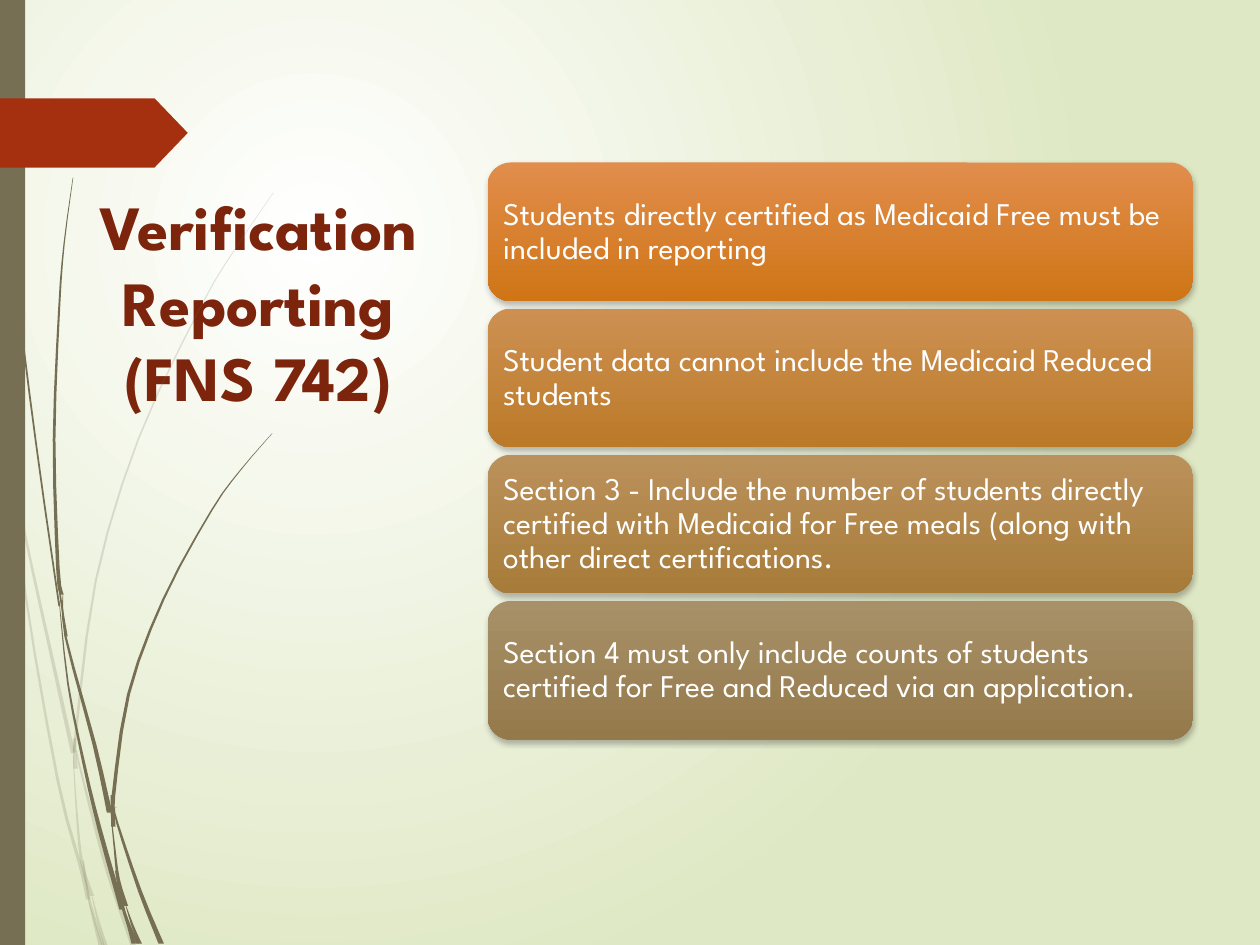
from lxml import etree
from pptx import Presentation
from pptx.dml.color import RGBColor
from pptx.enum.shapes import MSO_SHAPE as SHAPE
from pptx.enum.text import MSO_ANCHOR as ANCHOR, MSO_AUTO_SIZE as FIT, PP_ALIGN as ALIGN
from pptx.oxml import parse_xml
from pptx.oxml.ns import nsdecls, qn
from pptx.util import Pt

PX = 9144  # 100 px to the inch
FONT = "League Spartan"
OLIVE, RUST, BROWN, WHITE = "766F54", "A53010", "7C240C", "FFFFFF"

CARDS = [
    ("Students directly certified as Medicaid Free must be included in reporting",
     "E18D4C", "CF7516"),
    ("Student data cannot include the Medicaid Reduced students",
     "CE9052", "BB7A28"),
    ("Section 3 - Include the number of students directly certified with "
     "Medicaid for Free meals (along with other direct certifications.",
     "BB915B", "A77C3A"),
    ("Section 4 must only include counts of students certified for Free "
     "and Reduced via an application.",
     "A89068", "947A4B"),
]

# Each piece of grass: centre line from tip to root, tip width, root width
FAINT = [
    ([(0, 282), (6, 322), (8, 350)], 1, 1),
    ([(10, 345), (11, 370), (20, 425), (41, 521), (58, 598)], 0, 3),
    ([(61, 596), (63, 607), (74, 650), (86, 693), (106, 751)], 0, 4),
    ([(73, 711), (78, 731), (84, 751)], 0, 3),
    ([(8, 350), (12, 376), (20, 470), (46, 620), (64, 688), (70, 714)], 0, 3),
    ([(58, 599), (61, 646), (65, 685), (73, 711)], 0, 3),
    ([(217, 153), (187, 197), (159, 244), (110, 348), (76, 461), (60, 584),
      (60, 596)], 0, 2),
    ([(70, 714), (75, 733), (80, 751)], 0, 3),
    ([(59, 586), (60, 610)], 2, 3),
    ([(66, 683), (70, 710), (76, 732), (82, 751)], 1, 2),
]
DARK = [
    ([(2, 0), (5, 110), (14, 232), (29, 355), (47, 481)], 1, 1),
    ([(50, 472), (52, 505), (75, 591), (87, 645)], 0, 4),
    ([(91, 641), (93, 653), (111, 707), (128, 749)], 0, 4),
    ([(47, 477), (54, 543), (67, 608), (79, 658), (97, 722)], 0, 4),
    ([(58, 141), (51, 193), (47, 245), (43, 349), (46, 451), (49, 472)], 0, 3),
    ([(100, 719), (105, 734), (111, 749)], 0, 3),
    ([(46, 449), (48, 474), (53, 505)], 1, 1),
    ([(216, 344), (191, 373), (168, 405), (130, 475), (102, 551), (90, 632),
      (91, 641)], 0, 3),
    ([(97, 722), (102, 736), (106, 749)], 0, 3),
    ([(88, 645), (91, 674), (94, 698), (100, 719)], 0, 3),
    ([(89, 631), (90, 656)], 2, 3),
    ([(92, 691), (96, 713), (101, 730), (109, 749)], 1, 2),
]


def px(*nums):
    return [round(n * PX) for n in nums]


def rgb(code):
    return RGBColor.from_string(code)


def blend(fill, top, end, angle=None):
    fill.gradient()
    if angle is not None:
        fill.gradient_angle = angle
    for stop, code, pos in zip(fill.gradient_stops, (top, end), (0, 1)):
        stop.color.rgb = rgb(code)
        stop.position = pos


def paint(shape, code, alpha=None):
    """Fill plainly, with no line or shadow; alpha is a percentage."""
    shape.shadow.inherit = False
    shape.line.fill.background()
    shape.fill.solid()
    shape.fill.fore_color.rgb = rgb(code)
    if alpha:
        tint = shape._element.spPr.find(".//" + qn("a:srgbClr"))
        etree.SubElement(tint, qn("a:alpha")).set("val", str(alpha * 1000))


def glow(slide):
    """Set the round background gradient."""
    blend(slide.background.fill, WHITE, "DFE8C4")
    grad = slide._element.find(".//" + qn("a:gradFill"))
    grad.remove(grad.find(qn("a:lin")))
    grad.append(parse_xml(
        f'<a:path {nsdecls("a")} path="circle">'
        '<a:fillToRect l="50000" t="50000" r="100000" b="100000"/></a:path>'))


def curve(knots, steps=3):
    """Return points on a Catmull-Rom spline through the knots."""
    ends = [knots[0], *knots, knots[-1]]
    points = []
    for a, b, c, d in zip(ends, ends[1:], ends[2:], ends[3:]):
        for i in range(steps):
            t = i / steps
            points.append(tuple(
                (2 * q + (r - p) * t + (2 * p - 5 * q + 4 * r - s) * t ** 2
                 + (3 * q - p - 3 * r + s) * t ** 3) / 2
                for p, q, r, s in zip(a, b, c, d)))
    return points + [knots[-1]]


def blade(slide, knots, tip, root, alpha=None):
    points = curve(knots)
    last = len(points) - 1
    half = [0.2 + (tip + (root - tip) * i / last) / 2 for i in range(last + 1)]
    left = [px(x - h, y) for (x, y), h in zip(points, half)]
    right = [px(x + h, y) for (x, y), h in zip(points, half)]
    pen = slide.shapes.build_freeform(*left[0])
    pen.add_line_segments(left[1:] + right[::-1])
    paint(pen.convert_to_shape(), OLIVE, alpha)


def style(para, size, code, bold=False):
    font = para.font
    font.name, font.size, font.bold = FONT, Pt(size), bold
    font.color.rgb = rgb(code)


def heading(slide, text):
    title = slide.shapes.title
    title.left, title.top, title.width, title.height = px(53, 144, 304, 394)
    frame = title.text_frame
    frame.text = text
    frame.word_wrap, frame.auto_size = True, FIT.NONE
    frame.vertical_anchor = ANCHOR.TOP
    para = frame.paragraphs[0]
    para.alignment = ALIGN.CENTER
    style(para, 36, BROWN, True)


def card(slide, y, text, top, end):
    box = slide.shapes.add_shape(SHAPE.ROUNDED_RECTANGLE, *px(387, y, 560, 110))
    box.line.fill.background()
    blend(box.fill, top, end, 270)
    box._element.spPr.append(parse_xml(
        f'<a:effectLst {nsdecls("a")}><a:outerShdw blurRad="{Pt(3)}" '
        f'dist="{Pt(2)}" dir="5400000" rotWithShape="0"><a:srgbClr val="000000">'
        '<a:alpha val="25000"/></a:srgbClr></a:outerShdw></a:effectLst>'))
    frame = box.text_frame
    frame.word_wrap, frame.vertical_anchor = True, ANCHOR.MIDDLE
    frame.margin_left = frame.margin_right = px(7)[0]
    frame.text = text
    para = frame.paragraphs[0]
    para.alignment, para.line_spacing = ALIGN.LEFT, 0.9
    style(para, 18, WHITE)


def main():
    deck = Presentation()
    deck.slide_width, deck.slide_height = px(1000, 750)
    slide = deck.slides.add_slide(deck.slide_layouts[5])
    glow(slide)
    for piece in FAINT:
        blade(slide, *piece, alpha=20)
    for piece in DARK:
        blade(slide, *piece)
    paint(slide.shapes.add_shape(SHAPE.RECTANGLE, *px(0, 0, 20, 750)), OLIVE)
    arrow = slide.shapes.add_shape(SHAPE.PENTAGON, *px(0, 78, 149, 55))
    arrow.adjustments[0] = 0.48
    paint(arrow, RUST)
    heading(slide, "Verification Reporting\v(FNS 742)")
    for i, (text, top, end) in enumerate(CARDS):
        card(slide, 129 + 116 * i, text, top, end)
    deck.save("out.pptx")


if __name__ == "__main__":
    main()
